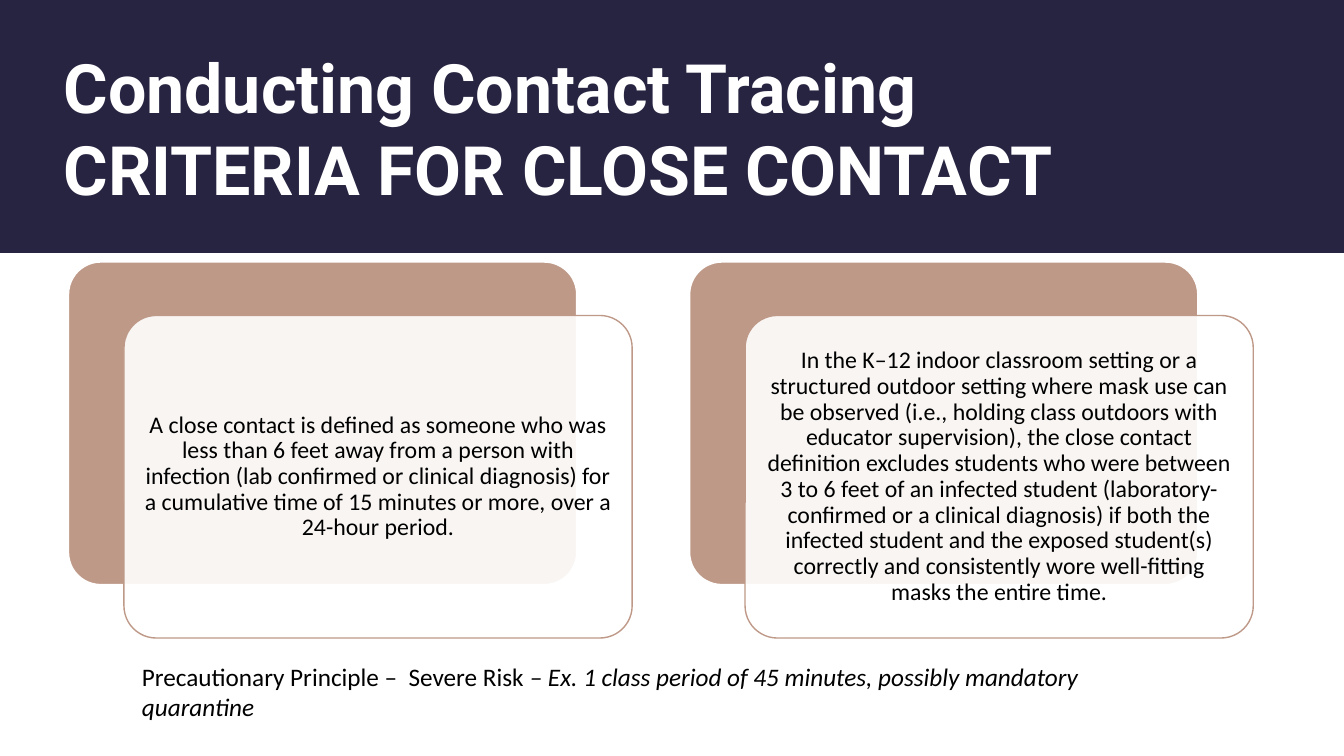
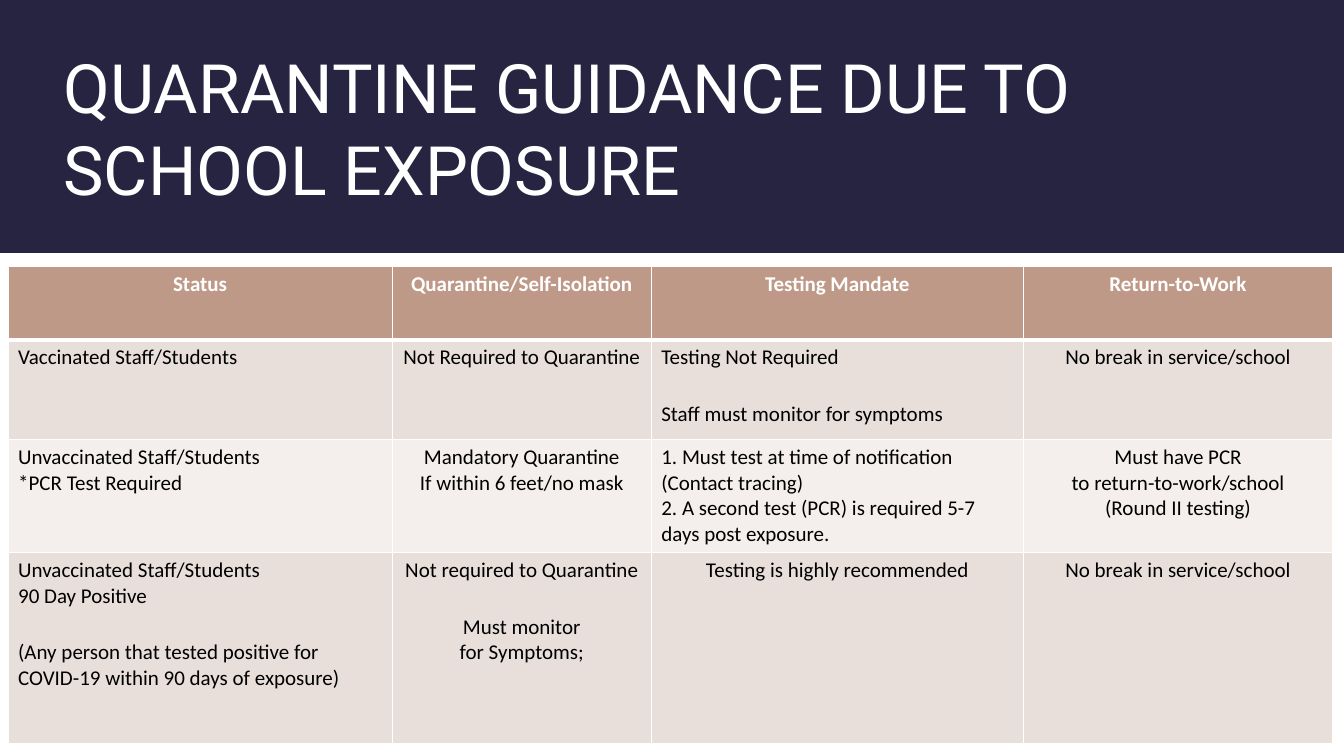
from lxml import etree
from pptx import Presentation
from pptx.dml.color import RGBColor
from pptx.enum.shapes import MSO_SHAPE
from pptx.enum.text import MSO_ANCHOR, MSO_AUTO_SIZE, PP_ALIGN
from pptx.oxml.ns import qn
from pptx.util import Inches, Pt

LEFT, CENTER = PP_ALIGN.LEFT, PP_ALIGN.CENTER
MIDDLE, BOTTOM = MSO_ANCHOR.MIDDLE, MSO_ANCHOR.BOTTOM
RECTANGLE, ROUNDED = MSO_SHAPE.RECTANGLE, MSO_SHAPE.ROUNDED_RECTANGLE

NAVY = RGBColor(0x27, 0x24, 0x41)
CLAY = RGBColor(0xBF, 0x99, 0x88)
ROSE = RGBColor(0xE8, 0xDE, 0xDA)
CREAM = RGBColor(0xF4, 0xEF, 0xED)
WHITE = RGBColor(0xFF, 0xFF, 0xFF)
BLACK = RGBColor(0x00, 0x00, 0x00)

TITLE_FONT = dict(name="Roboto", size=Pt(48.6))
BODY_FONT = dict(name="Calibri", color=BLACK)
PARAGRAPH_GAP = Pt(22)

CRITERIA_TITLE = "Conducting Contact Tracing\vCRITERIA FOR CLOSE CONTACT"
CRITERIA = [
    "A close contact is defined as someone who was less than 6 feet away from a "
    "person with infection (lab confirmed or clinical diagnosis) for a cumulative "
    "time of 15 minutes or more, over a 24-hour period.",
    "In the K–12 indoor classroom setting or a structured outdoor setting where mask "
    "use can be observed (i.e., holding class outdoors with educator supervision), the "
    "close contact definition excludes students who were between 3 to 6 feet of an "
    "infected student (laboratory-confirmed or a clinical diagnosis) if both the "
    "infected student and the exposed student(s) correctly and consistently wore "
    "well-fitting masks the entire time.",
]
PRINCIPLE = [
    ("Precautionary Principle –  Severe Risk ", False),
    ("– Ex. 1 class period of 45 minutes, possibly mandatory quarantine", True),
]

GUIDANCE_TITLE = "QUARANTINE GUIDANCE DUE TO SCHOOL EXPOSURE"
COLUMN_WIDTHS = [3.81, 2.57, 3.69, 3.07]
ROW_HEIGHTS = [0.73, 0.99, 1.02, 1.9]
ROW_FILLS = [CLAY, ROSE, CREAM, ROSE]
# Each cell is an alignment and its groups of lines; a gap parts the groups.
GUIDANCE = [
    [(CENTER, [[heading]]) for heading in
     ("Status", "Quarantine/Self-Isolation", "Testing Mandate", "Return-to-Work")],
    [(LEFT, [["Vaccinated Staff/Students"]]),
     (CENTER, [["Not Required to Quarantine"]]),
     (LEFT, [["Testing Not Required"], ["Staff must monitor for symptoms"]]),
     (CENTER, [["No break in service/school"]])],
    [(LEFT, [["Unvaccinated Staff/Students", "*PCR Test Required"]]),
     (CENTER, [["Mandatory Quarantine", "If within 6 feet/no mask"]]),
     (LEFT, [["1. Must test at time of notification (Contact tracing)",
              "2. A second test (PCR) is required 5-7 days post exposure."]]),
     (CENTER, [["Must have PCR", "to return-to-work/school", "(Round II testing)"]])],
    [(LEFT, [["Unvaccinated Staff/Students", "90 Day Positive"],
             ["(Any person that tested positive for COVID-19 within 90 days of exposure)"]]),
     (CENTER, [["Not required to Quarantine"], ["Must monitor\vfor Symptoms;"]]),
     (CENTER, [["Testing is highly recommended"]]),
     (CENTER, [["No break in service/school"]])],
]


def style_font(font, color, **values):
    font.color.rgb = color
    for name, value in values.items():
        setattr(font, name, value)


def add_box(slide, preset, place, fill, line=None):
    box = slide.shapes.add_shape(preset, *map(Inches, place))
    box.shadow.inherit = False
    box.fill.solid()
    box.fill.fore_color.rgb = fill
    if line is None:
        box.line.fill.background()
    else:
        box.line.color.rgb = line
        box.line.width = Pt(1)
    if preset == ROUNDED:
        box.adjustments[0] = 0.1
    return box


def add_titled_slide(deck, text, bold):
    slide = deck.slides.add_slide(deck.slide_layouts[5])
    add_box(slide, RECTANGLE, (0, 0, 13.33, 2.51), NAVY)
    title = slide.shapes.title
    title._element.getparent().append(title._element)  # in front of the band
    title.left, title.top, title.width, title.height = map(Inches, (0.53, 0.4, 11.89, 1.72))
    frame = title.text_frame
    frame.text = text
    frame.word_wrap = True
    frame.auto_size = MSO_AUTO_SIZE.NONE
    frame.vertical_anchor = BOTTOM
    para = frame.paragraphs[0]
    para.alignment = LEFT
    for span in para.runs:
        style_font(span.font, WHITE, bold=bold, **TITLE_FONT)
    return slide


def add_criterion(slide, left, text):
    """Draw a clay panel with a translucent text card offset in front of it."""
    top, width, height = 2.6, 5.04, 3.2
    add_box(slide, ROUNDED, (left, top, width, height), CLAY, WHITE)
    card = add_box(slide, ROUNDED, (left + 0.55, top + 0.53, width, height), WHITE, CLAY)
    color = card._element.spPr.find(qn("a:solidFill"))[0]
    etree.SubElement(color, qn("a:alpha"), val="90000")
    frame = card.text_frame
    frame.word_wrap = True
    frame.vertical_anchor = MIDDLE
    for side in ("left", "top", "right", "bottom"):
        setattr(frame, f"margin_{side}", Inches(0.07))
    para = frame.paragraphs[0]
    para.text = text
    para.alignment = CENTER
    para.line_spacing = 0.9
    style_font(para.runs[0].font, size=Pt(17), **BODY_FONT)


def add_principle(slide):
    box = slide.shapes.add_textbox(*map(Inches, (1.31, 6.51, 10.36, 0.71)))
    box.text_frame.word_wrap = True
    para = box.text_frame.paragraphs[0]
    for text, italic in PRINCIPLE:
        span = para.add_run()
        span.text = text
        style_font(span.font, size=Pt(18), italic=italic, **BODY_FONT)


def set_borders(cell, widths):
    properties = cell._tc.get_or_add_tcPr()
    for side, width in widths.items():
        line = etree.SubElement(properties, qn(f"a:ln{side}"), w=str(Pt(width)))
        fill = etree.SubElement(line, qn("a:solidFill"))
        etree.SubElement(fill, qn("a:srgbClr"), val=str(WHITE))


def fill_cell(cell, alignment, groups, header):
    frame = cell.text_frame
    lines = [(line, group > 0 and index == 0)
             for group, members in enumerate(groups)
             for index, line in enumerate(members)]
    for number, (line, gap) in enumerate(lines):
        para = frame.add_paragraph() if number else frame.paragraphs[0]
        para.text = line
        para.alignment = alignment
        if gap:
            para.space_before = PARAGRAPH_GAP
        for span in para.runs:
            style_font(span.font, WHITE if header else BLACK,
                       name="Calibri", size=Pt(15), bold=header)


def add_guidance_table(slide):
    place = (0.08, 2.64, sum(COLUMN_WIDTHS), sum(ROW_HEIGHTS))
    table = slide.shapes.add_table(
        len(ROW_HEIGHTS), len(COLUMN_WIDTHS), *map(Inches, place)).table
    for column, width in zip(table.columns, COLUMN_WIDTHS):
        column.width = Inches(width)
    for index, (row, height) in enumerate(zip(table.rows, ROW_HEIGHTS)):
        row.height = Inches(height)
        borders = dict(L=1, R=1, T=3 if index == 1 else 1, B=3 if index == 0 else 1)
        for cell, (alignment, groups) in zip(row.cells, GUIDANCE[index]):
            set_borders(cell, borders)
            cell.fill.solid()
            cell.fill.fore_color.rgb = ROW_FILLS[index]
            fill_cell(cell, alignment, groups, header=index == 0)


def main():
    deck = Presentation()
    deck.slide_width, deck.slide_height = Inches(13.33), Inches(7.5)

    criteria = add_titled_slide(deck, CRITERIA_TITLE, bold=True)
    for index, text in enumerate(CRITERIA):
        add_criterion(criteria, 0.68 + index * 6.16, text)
    add_principle(criteria)

    guidance = add_titled_slide(deck, GUIDANCE_TITLE, bold=False)
    add_guidance_table(guidance)

    deck.save("out.pptx")


if __name__ == "__main__":
    main()
